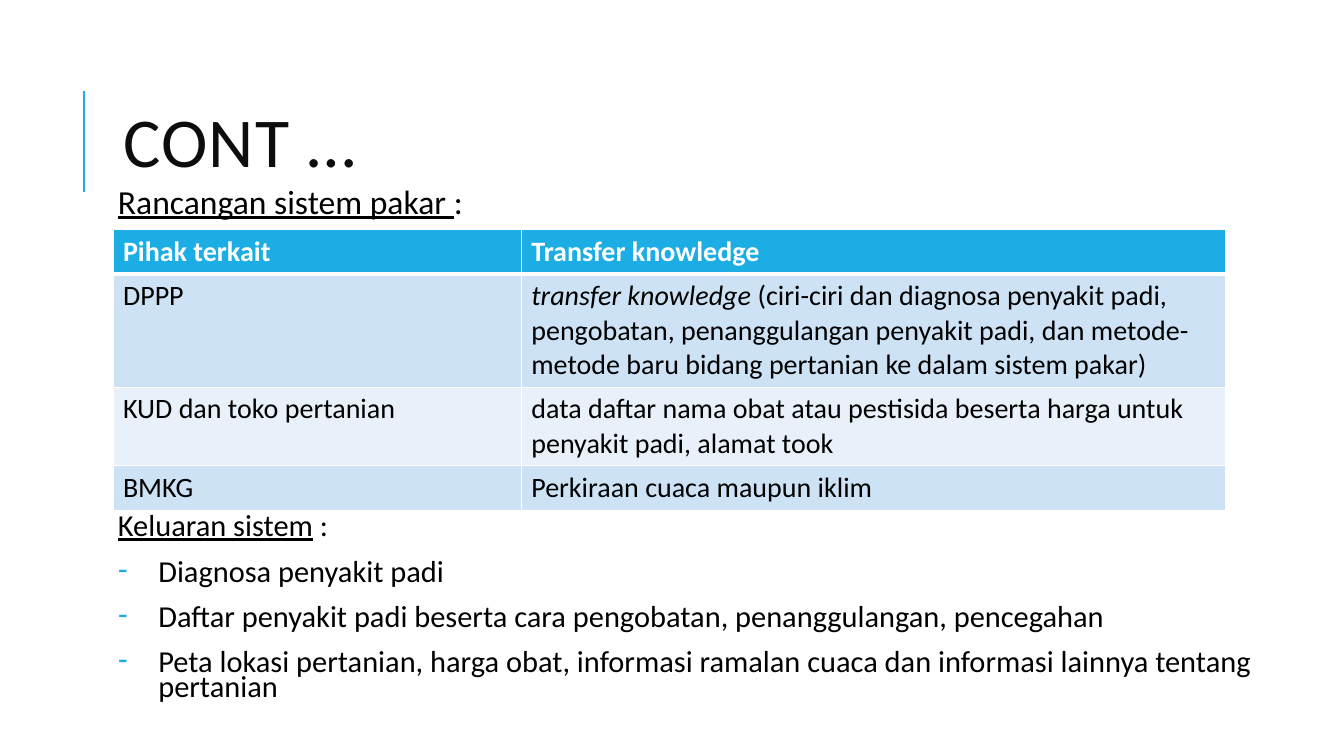
from lxml import etree
from pptx import Presentation
from pptx.dml.color import RGBColor
from pptx.enum.shapes import MSO_CONNECTOR
from pptx.enum.text import MSO_ANCHOR, MSO_AUTO_SIZE, PP_ALIGN
from pptx.oxml.ns import qn
from pptx.util import Inches, Pt

STRAIGHT = MSO_CONNECTOR.STRAIGHT
MIDDLE, TOP = MSO_ANCHOR.MIDDLE, MSO_ANCHOR.TOP
NO_AUTOFIT = MSO_AUTO_SIZE.NONE
LEFT = PP_ALIGN.LEFT

FONT = "Calibri"
ACCENT, WHITE, BLACK, TITLE_INK = "1CADE4", "FFFFFF", "000000", "0D0D0D"
DARK_BAND, LIGHT_BAND = "CDE3F5", "E8F1FA"

HEADER = ["Pihak terkait", "Transfer knowledge"]
PARTIES = [
    ["DPPP", "(ciri-ciri dan diagnosa penyakit padi, pengobatan, penanggulangan "
             "penyakit padi, dan metode-metode baru bidang pertanian ke dalam sistem pakar)"],
    ["KUD dan toko pertanian",
     "data daftar nama obat atau pestisida beserta harga untuk penyakit padi, alamat took"],
    ["BMKG", "Perkiraan cuaca maupun iklim"],
]
ITALIC_LEADS = {(1, 1): "transfer knowledge "}
COLUMN_WIDTHS = [4.05, 6.99]
ROW_HEIGHTS = [0.44, 1.12, 0.78, 0.44]
OUTPUTS = [
    "Diagnosa penyakit padi",
    "Daftar penyakit padi beserta cara pengobatan, penanggulangan, pencegahan",
    "Peta lokasi pertanian, harga obat, informasi ramalan cuaca dan informasi "
    "lainnya tentang pertanian",
]
GAP_BEFORE, GAP_OVER_TABLE = 12, 210


def rgb(code):
    """Turn a hex string into a colour."""
    return RGBColor.from_string(code)


def apply(target, formats):
    """Set every attribute named in the formats."""
    for attribute, value in formats.items():
        setattr(target, attribute, value)


def place(placeholder, left, top, width, height):
    """Move and size a placeholder."""
    apply(placeholder, {"left": Inches(left), "top": Inches(top),
                        "width": Inches(width), "height": Inches(height)})


def add_run(paragraph, text, size, color, **formats):
    """Append a formatted run."""
    run = paragraph.add_run()
    run.text = text
    apply(run.font, {"name": FONT, "size": Pt(size), **formats})
    run.font.color.rgb = rgb(color)
    return run


def set_bullet(paragraph, mark=None):
    """Give a paragraph a hanging accent bullet, or none."""
    properties = paragraph._p.get_or_add_pPr()
    hang = Inches(0.4) if mark else 0
    properties.set("marL", str(hang))
    properties.set("indent", str(-hang))
    if mark:
        bullet_color = etree.SubElement(properties, qn("a:buClr"))
        etree.SubElement(bullet_color, qn("a:srgbClr")).set("val", ACCENT)
        etree.SubElement(properties, qn("a:buChar")).set("char", mark)
    else:
        etree.SubElement(properties, qn("a:buNone"))


def next_paragraph(frame, mark=None, before=GAP_BEFORE):
    """Return the next body paragraph with its spacing and bullet."""
    first = frame.paragraphs[0]
    paragraph = frame.add_paragraph() if first.runs else first
    apply(paragraph, {"line_spacing": 0.7, "space_before": Pt(before),
                      "space_after": Pt(2), "alignment": LEFT})
    set_bullet(paragraph, mark)
    return paragraph


def add_heading(frame, text, colon, size, before=GAP_BEFORE):
    """Add an underlined heading followed by a plain colon."""
    paragraph = next_paragraph(frame, before=before)
    add_run(paragraph, text, size, BLACK, underline=True)
    add_run(paragraph, colon, size, BLACK, underline=False)


def fill_title(title):
    """Place and write the slide title."""
    place(title, 1.12, 0.64, 10.63, 1.64)
    apply(title.text_frame, {"vertical_anchor": MIDDLE, "auto_size": NO_AUTOFIT})
    heading = title.text_frame.paragraphs[0]
    apply(heading, {"alignment": LEFT, "line_spacing": 0.8})
    run = add_run(heading, "CONT …", 50, TITLE_INK)
    run.font._element.set("spc", "100")


def fill_body(body):
    """Write the headings and the list of system outputs."""
    place(body, 1.12, 1.85, 11.94, 5.25)
    frame = body.text_frame
    inset = Inches(0.05)
    apply(frame, {"margin_left": inset, "margin_top": inset, "margin_right": inset,
                  "margin_bottom": inset, "vertical_anchor": TOP, "auto_size": NO_AUTOFIT})
    add_heading(frame, "Rancangan sistem pakar ", ":", 24)
    add_heading(frame, "Keluaran sistem", " :", 21.7, GAP_OVER_TABLE)
    for output in OUTPUTS:
        add_run(next_paragraph(frame, "-"), output, 21.7, BLACK)


def add_border(cell, side, width):
    """Draw one white cell border."""
    border = etree.SubElement(cell._tc.get_or_add_tcPr(), qn(f"a:{side}"))
    border.set("w", str(Pt(width)))
    paint = etree.SubElement(border, qn("a:solidFill"))
    etree.SubElement(paint, qn("a:srgbClr")).set("val", WHITE)


def format_cell(cell, is_header, row):
    """Give a cell its borders and band colour."""
    thick_side = "lnB" if is_header else "lnT" if row == 1 else None
    for side in ("lnL", "lnR", "lnT", "lnB"):
        add_border(cell, side, 3 if side == thick_side else 1)
    cell.fill.solid()
    band = DARK_BAND if row % 2 else LIGHT_BAND
    cell.fill.fore_color.rgb = rgb(ACCENT if is_header else band)


def add_party_table(slide):
    """Add the table of parties and the knowledge they transfer."""
    rows = [HEADER, *PARTIES]
    table = slide.shapes.add_table(
        len(rows), len(HEADER), Inches(1.12), Inches(2.28),
        Inches(sum(COLUMN_WIDTHS)), Inches(sum(ROW_HEIGHTS))).table
    for column, width in zip(table.columns, COLUMN_WIDTHS):
        column.width = Inches(width)
    for table_row, height in zip(table.rows, ROW_HEIGHTS):
        table_row.height = Inches(height)
    for row, texts in enumerate(rows):
        is_header = row == 0
        ink = WHITE if is_header else BLACK
        for column, text in enumerate(texts):
            cell = table.cell(row, column)
            format_cell(cell, is_header, row)
            paragraph = cell.text_frame.paragraphs[0]
            if (row, column) in ITALIC_LEADS:
                add_run(paragraph, ITALIC_LEADS[row, column], 20, ink, italic=True)
            add_run(paragraph, text, 20, ink, bold=is_header)


def add_accent_line(slide):
    """Draw the vertical line beside the title."""
    accent = slide.shapes.add_connector(
        STRAIGHT, Inches(0.83), Inches(1.9), Inches(0.83), Inches(0.9))
    accent.line.color.rgb = rgb(ACCENT)
    accent.line.width = Pt(1.5)
    etree.SubElement(accent._element.spPr, qn("a:effectLst"))


def main():
    """Build and save the slide."""
    deck = Presentation()
    apply(deck, {"slide_width": Inches(13.33), "slide_height": Inches(7.5)})
    slide = deck.slides.add_slide(deck.slide_layouts[1])
    add_accent_line(slide)
    fill_title(slide.shapes.title)
    fill_body(slide.placeholders[1])
    add_party_table(slide)
    deck.save("out.pptx")


if __name__ == "__main__":
    main()
